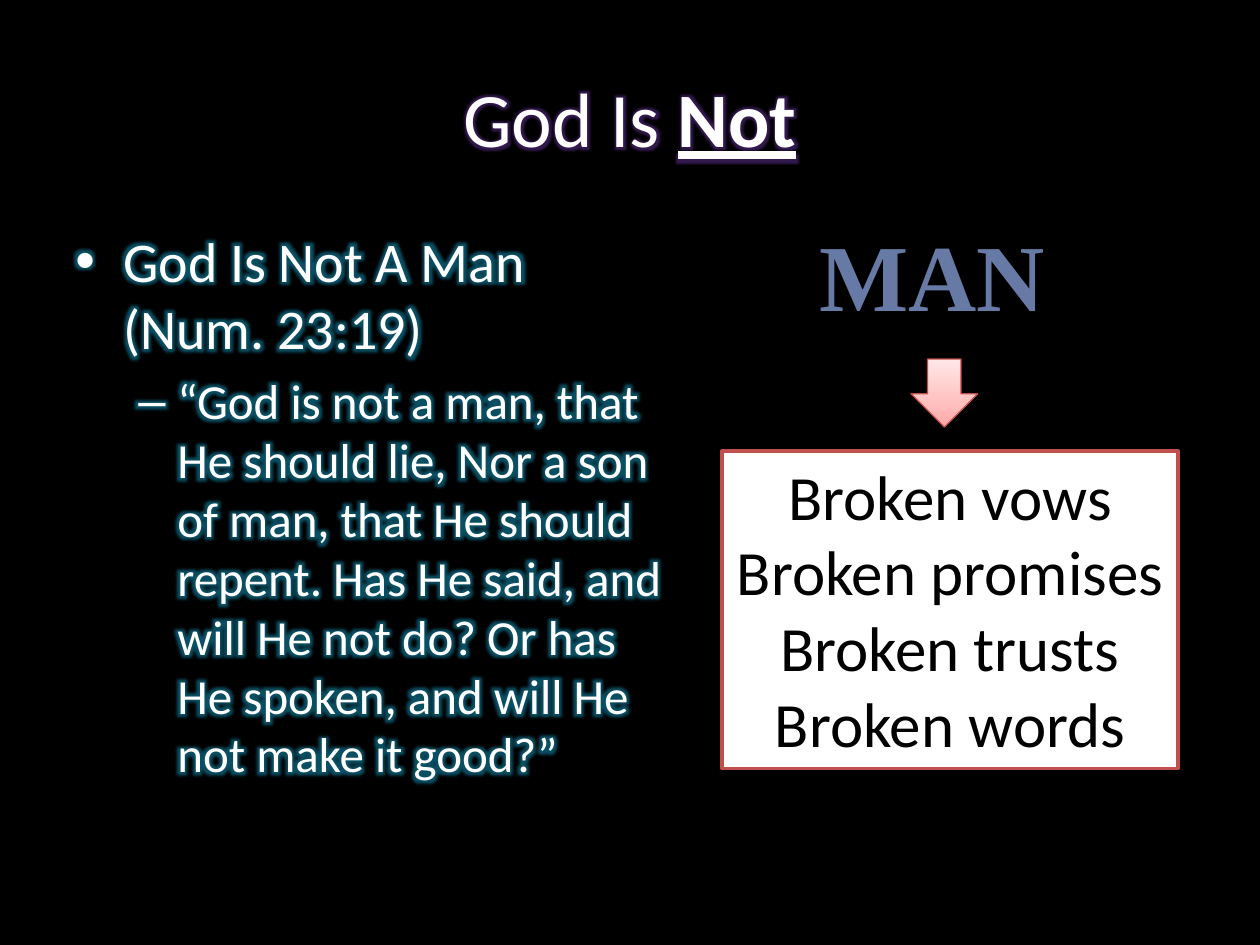
from lxml import etree
from pptx import Presentation
from pptx.dml.color import RGBColor as RGB
from pptx.enum.shapes import MSO_SHAPE as SHAPE
from pptx.enum.text import MSO_ANCHOR as ANCHOR, MSO_AUTO_SIZE as FIT, PP_ALIGN as ALIGN
from pptx.oxml import parse_xml
from pptx.oxml.ns import nsdecls, qn
from pptx.util import Inches, Pt

COLORS = {
    "black": "000000", "white": "FFFFFF", "man": "677AA5", "outline": "F2EEDD",
    "title_glow": "7F3FC4", "body_glow": "1BC5F7",
    "arrow_line": "BF4C48", "box_line": "C0504D",
}
ARROW_STOPS = [(0, "FFA6A5"), (35, "FFC0BF"), (100, "FFE7E7")]


def style(r, size, color, font="Calibri", glow=None, radius=0):
    r.font.size = Pt(size)
    r.font.name = font
    r.font.color.rgb = RGB.from_string(COLORS[color])
    if glow:
        r.font.fill._xPr.find(qn("a:solidFill")).addnext(parse_xml(
            f'<a:effectLst {nsdecls("a")}><a:glow rad="{Pt(radius)}">'
            f'<a:srgbClr val="{COLORS[glow]}"><a:alpha val="40000"/></a:srgbClr>'
            '</a:glow></a:effectLst>'))


prs = Presentation()
prs.slide_width, prs.slide_height = Inches(10), Inches(7.5)
s = prs.slides.add_slide(prs.slide_layouts[5])
s.background.fill.solid()
s.background.fill.fore_color.rgb = RGB.from_string(COLORS["black"])

# Title
title = s.shapes.title
title.left, title.top = Inches(0.5), Inches(0.3)
title.width, title.height = Inches(9), Inches(1.25)
tf = title.text_frame
tf.vertical_anchor = ANCHOR.MIDDLE
p = tf.paragraphs[0]
p.alignment = ALIGN.CENTER
for text, strong in [("God Is ", False), ("Not", True)]:
    r = p.add_run()
    r.text = text
    style(r, 44, "white", glow="title_glow", radius=5)
    r.font.bold = r.font.underline = strong

# Verse with two bullet levels
verse = [
    ("God Is Not A Man (Num. 23:19)", 32, "•", 0.38, 0.38),
    ("“God is not a man, that He should lie, Nor a son of man, that He should "
     "repent. Has He said, and will He not do? Or has He spoken, and will He "
     "not make it good?”", 28, "–", 0.81, 0.31),
]
tf = s.shapes.add_textbox(Inches(0.5), Inches(1.75), Inches(4.92), Inches(5.42)).text_frame
tf.word_wrap = True
for level, (text, size, bullet, margin, hang) in enumerate(verse):
    p = tf.add_paragraph() if level else tf.paragraphs[0]
    p.text = text
    p.level = level
    p.space_before = Pt(size * 0.2)
    style(p.runs[0], size, "white", glow="body_glow", radius=8)
    pPr = p._p.get_or_add_pPr()
    pPr.set("marL", str(Inches(margin)))
    pPr.set("indent", str(-Inches(hang)))
    etree.SubElement(pPr, qn("a:buFont")).set("typeface", "Arial")
    etree.SubElement(pPr, qn("a:buChar")).set("char", bullet)

# Heading on the right
tf = s.shapes.add_textbox(Inches(6.39), Inches(1.67), Inches(2.2), Inches(1.01)).text_frame
tf.word_wrap = False
tf.auto_size = FIT.SHAPE_TO_FIT_TEXT
p = tf.paragraphs[0]
p.text = "MAN "
p.alignment = ALIGN.CENTER
r = p.runs[0]
style(r, 54, "man", "Times New Roman")
r.font.bold = True
r.font.fill._xPr.insert(0, parse_xml(
    f'<a:ln {nsdecls("a")} w="{Pt(1)}"><a:solidFill>'
    f'<a:srgbClr val="{COLORS["outline"]}"/></a:solidFill></a:ln>'))

# Down arrow with gradient and soft shadow
arrow = s.shapes.add_shape(SHAPE.DOWN_ARROW, Inches(7.23), Inches(2.85), Inches(0.53), Inches(0.54))
arrow.line.color.rgb = RGB.from_string(COLORS["arrow_line"])
arrow.line.width = Pt(0.75)
arrow.shadow.inherit = False
spPr = arrow._element.spPr
stops = "".join(f'<a:gs pos="{pos * 1000}"><a:srgbClr val="{c}"/></a:gs>' for pos, c in ARROW_STOPS)
spPr.find(qn("a:prstGeom")).addnext(parse_xml(
    f'<a:gradFill {nsdecls("a")} rotWithShape="1"><a:gsLst>{stops}</a:gsLst>'
    '<a:lin ang="16200000" scaled="1"/></a:gradFill>'))
spPr.find(qn("a:effectLst")).append(parse_xml(
    f'<a:outerShdw {nsdecls("a")} blurRad="{Pt(3.1)}" dist="{Pt(1.6)}" dir="5400000" '
    f'rotWithShape="0"><a:srgbClr val="{COLORS["black"]}"><a:alpha val="38000"/>'
    '</a:srgbClr></a:outerShdw>'))

# Box of broken things
box = s.shapes.add_shape(SHAPE.RECTANGLE, Inches(5.73), Inches(3.58), Inches(3.62), Inches(2.52))
box.shadow.inherit = False
box.fill.solid()
box.fill.fore_color.rgb = RGB.from_string(COLORS["white"])
box.line.color.rgb = RGB.from_string(COLORS["box_line"])
box.line.width = Pt(2)
tf = box.text_frame
tf.word_wrap = False
tf.auto_size = FIT.SHAPE_TO_FIT_TEXT
tf.vertical_anchor = ANCHOR.TOP
tf.text = "\n".join(f"Broken {thing}" for thing in ["vows", "promises", "trusts", "words"])
for p in tf.paragraphs:
    p.alignment = ALIGN.CENTER
    style(p.runs[0], 36, "black")

prs.save("out.pptx")
